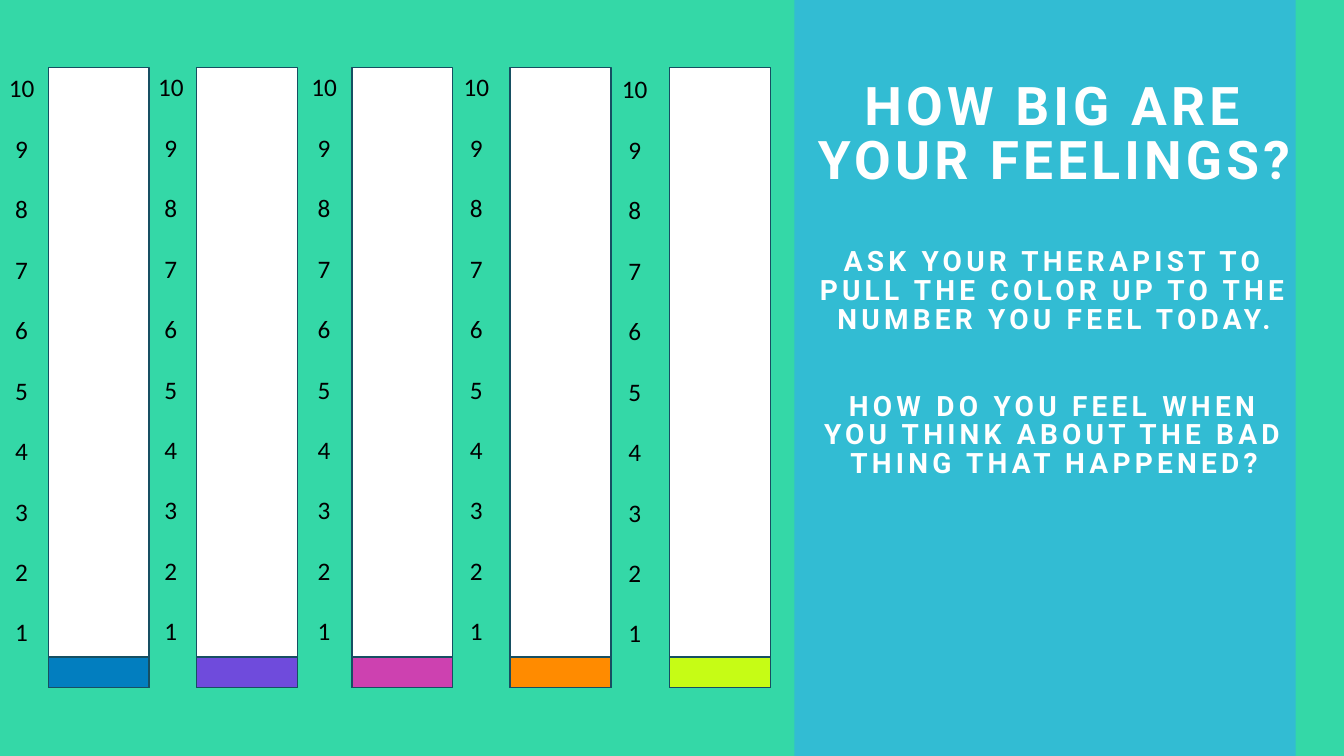
from pptx import Presentation
from pptx.dml.color import RGBColor
from pptx.enum.shapes import MSO_SHAPE
from pptx.enum.text import MSO_ANCHOR, MSO_AUTO_SIZE, PP_ALIGN
from pptx.oxml.ns import qn
from pptx.util import Inches, Pt
from lxml.etree import SubElement

COLORS = {
    "background": "34D8A7",
    "panel": "32B5DF",
    "outline": "164F62",
    "white": "FFFFFF",
    "black": "000000",
    "blue": "027EBF",
    "purple": "6F4BDC",
    "pink": "CD41B0",
    "orange": "FF8B00",
    "lime": "C6FC15",
}

# Left of bar, left and top of its numbers, colour of its level
METERS = [
    (0.48, 0, 0.67, "blue"),
    (1.95, 1.48, 0.66, "purple"),
    (3.49, 3, 0.66, "pink"),
    (5.06, 4.51, 0.66, "orange"),
    (6.64, 6.08, 0.68, "lime"),
]
BAR_TOP, BAR_WIDTH, BAR_HEIGHT, LEVEL_HEIGHT = 0.67, 1, 6.15, 0.3

PROMPTS = [
    ("HOW BIG ARE YOUR FEELINGS?", 38),
    ("ASK YOUR THERAPIST TO PULL THE COLOR UP TO THE NUMBER YOU FEEL TODAY.", 20),
    ("HOW DO YOU FEEL WHEN YOU THINK ABOUT THE BAD THING THAT HAPPENED?", 20),
]


def rgb(name):
    return RGBColor.from_string(COLORS[name])


def add_run(paragraph, text, font_name, size, color):
    run = paragraph.add_run()
    run.text = text
    run.font.name = font_name
    run.font.size = Pt(size)
    run.font.color.rgb = rgb(color)
    return run


def fill_panel(panel, left, top, width, height):
    """Turn the title placeholder into the translucent panel of prompts."""
    panel.left, panel.top = Inches(left), Inches(top)
    panel.width, panel.height = Inches(width), Inches(height)
    panel.fill.solid()
    panel.fill.fore_color.rgb = rgb("panel")
    fill_color = panel._element.spPr.find(qn("a:solidFill")).find(qn("a:srgbClr"))
    SubElement(fill_color, qn("a:alpha")).set("val", "80000")

    frame = panel.text_frame
    frame.word_wrap = True
    frame.auto_size = MSO_AUTO_SIZE.NONE
    frame.vertical_anchor = MSO_ANCHOR.TOP
    frame.margin_left, frame.margin_right = Inches(0.18), 0
    frame.margin_top, frame.margin_bottom = Inches(0.81), Inches(0.05)
    for index, (prompt, size) in enumerate(PROMPTS):
        paragraph = frame.add_paragraph() if index else frame.paragraphs[0]
        paragraph.alignment = PP_ALIGN.CENTER
        paragraph.line_spacing = 0.85
        paragraph.space_before = Pt(42 if index else 0)
        paragraph.space_after = Pt(0)
        run = add_run(paragraph, prompt, "Roboto", size, "white")
        run.font.bold = True
        run._r.get_or_add_rPr().set("spc", "300")


def add_bar(slide, left, top, width, height, color):
    bar = slide.shapes.add_shape(
        MSO_SHAPE.RECTANGLE, Inches(left), Inches(top), Inches(width), Inches(height))
    bar.shadow.inherit = False
    bar.fill.solid()
    bar.fill.fore_color.rgb = rgb(color)
    bar.line.color.rgb = rgb("outline")
    bar.line.width = Pt(1)


def add_scale(slide, left, top, width, height):
    """Write the numbers from 10 down to 1."""
    scale = slide.shapes.add_textbox(
        Inches(left), Inches(top), Inches(width), Inches(height))
    frame = scale.text_frame
    frame.word_wrap = True
    frame.margin_left = frame.margin_right = 0
    for number in range(10, 0, -1):
        paragraph = frame.paragraphs[0] if number == 10 else frame.add_paragraph()
        paragraph.alignment = PP_ALIGN.CENTER
        paragraph.space_before = Pt(0 if number == 10 else 21.6)
        add_run(paragraph, str(number), "Calibri", 18, "black")


def add_meter(slide, bar_left, scale_left, scale_top, color):
    add_bar(slide, bar_left, BAR_TOP, BAR_WIDTH, BAR_HEIGHT, "white")
    level_top = BAR_TOP + BAR_HEIGHT - LEVEL_HEIGHT
    add_bar(slide, bar_left, level_top, BAR_WIDTH, LEVEL_HEIGHT, color)
    add_scale(slide, scale_left, scale_top, 0.43, 5.86)


def main():
    presentation = Presentation()
    presentation.slide_width = Inches(13.33)
    presentation.slide_height = Inches(7.5)
    slide = presentation.slides.add_slide(presentation.slide_layouts[5])
    slide.background.fill.solid()
    slide.background.fill.fore_color.rgb = rgb("background")
    fill_panel(slide.shapes.title, 7.88, 0, 4.97, 7.5)
    for meter in METERS:
        add_meter(slide, *meter)
    presentation.save("out.pptx")


if __name__ == "__main__":
    main()
